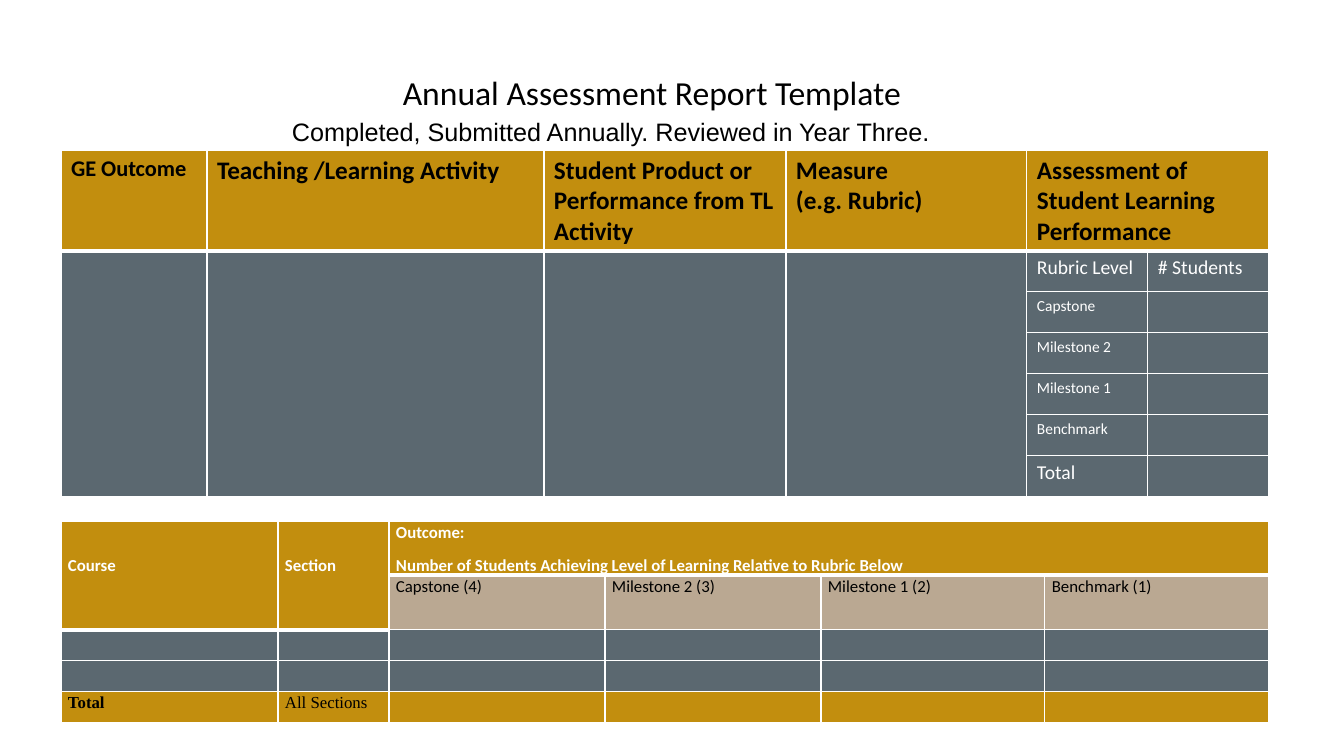
from pptx import Presentation
from pptx.dml.color import RGBColor
from pptx.enum.text import PP_ALIGN as Align
from pptx.oxml import parse_xml
from pptx.oxml.ns import nsdecls
from pptx.util import Pt

PX = 914400 / 100.8
COLORS = {"gold": "C28E0E", "slate": "5B6870", "tan": "BAA892",
          "white": "FFFFFF", "black": "000000"}
LEVELS = ["Capstone", "Milestone 2", "Milestone 1", "Benchmark"]
THIN, THICK = 1, 3


def px(length):
    return round(length * PX)


def color(name):
    return RGBColor.from_string(COLORS[name])


def write(frame, text, size, ink="black", font="Calibri", bold=False,
          align=Align.LEFT):
    frame.text = text
    for paragraph in frame.paragraphs:
        paragraph.alignment = align
        paragraph.font.size = Pt(size)
        paragraph.font.name = font
        paragraph.font.bold = bold
        paragraph.font.color.rgb = color(ink)


def add_heading(slide, box, text, size, font, align):
    frame = slide.shapes.add_textbox(*map(px, box)).text_frame
    frame.word_wrap = True
    write(frame, text, size, font=font, align=align)


def add_grid(slide, left, top, widths, heights):
    """Add a table without style flags, sized by its columns and rows."""
    table = slide.shapes.add_table(
        len(heights), len(widths), px(left), px(top),
        px(sum(widths)), px(sum(heights))).table
    table.first_row = table.horz_banding = False
    for column, width in zip(table.columns, widths):
        column.width = px(width)
    for row, height in zip(table.rows, heights):
        row.height = px(height)
    return table


def paint(cell, fill, bottom=THIN):
    """Fill a cell and rule its left, right and bottom edges in white."""
    cell.fill.solid()
    cell.fill.fore_color.rgb = color(fill)
    properties = cell._tc.get_or_add_tcPr()
    edges = [("lnL", THIN), ("lnR", THIN), ("lnB", bottom)]
    for index, (edge, width) in enumerate(edges):
        properties.insert(index, parse_xml(
            f'<a:{edge} {nsdecls("a")} w="{Pt(width)}"><a:solidFill>'
            f'<a:srgbClr val="{COLORS["white"]}"/></a:solidFill></a:{edge}>'))


def add_outcome_table(slide, left, top):
    table = add_grid(slide, left, top, [146, 337, 242, 241, 121, 121],
                     [100] + [41] * 6)
    for r, row in enumerate(table.rows):
        for cell in row.cells:
            paint(cell, "slate" if r else "gold", THIN if r else THICK)

    table.cell(0, 4).merge(table.cell(0, 5))
    for c in range(4):
        table.cell(1, c).merge(table.cell(6, c))

    headers = ["GE Outcome", "Teaching /Learning Activity",
               "Student Product or Performance from TL Activity",
               "Measure\n(e.g. Rubric)",
               "Assessment of Student Learning Performance"]
    for c, header in enumerate(headers):
        write(table.cell(0, c).text_frame, header, 18 if c else 16, bold=True)

    for r, label in enumerate(["Rubric Level", *LEVELS, "Total"], start=1):
        size = 11 if label in LEVELS else 14
        write(table.cell(r, 4).text_frame, label, size, "white")
    write(table.cell(1, 5).text_frame, "# Students", 14, "white")


def add_section_table(slide, left, top):
    table = add_grid(slide, left, top, [217, 111, 216, 216, 224, 224],
                     [54, 54, 31, 31, 31])
    row_fills = ["gold", "tan", "slate", "slate", "gold"]
    for r, fill in enumerate(row_fills):
        for c, cell in enumerate(table.rows[r].cells):
            in_header = r == 0 or (r == 1 and c < 2)
            paint(cell, "gold" if in_header else fill,
                  THICK if in_header else THIN)
            cell.margin_left = cell.margin_right = px(7)
            cell.margin_top = cell.margin_bottom = 0
            write(cell.text_frame, "", 12)

    def label(r, c, text, **style):
        frame = table.cell(r, c).text_frame
        write(frame, text, 12, **style)
        for paragraph in frame.paragraphs:
            paragraph.line_spacing = 1.07
            paragraph.space_after = Pt(8)

    for c, header in enumerate(["Course", "Section"]):
        table.cell(0, c).merge(table.cell(1, c))
        table.cell(0, c).margin_top = px(33)
        label(0, c, header, ink="white", bold=True)
    table.cell(0, 2).merge(table.cell(0, 5))
    label(0, 2, "Outcome:\nNumber of Students Achieving Level of Learning "
          "Relative to Rubric Below", ink="white", bold=True)
    for i, level in enumerate(LEVELS):
        label(1, 2 + i, f"{level} ({4 - i})")
    label(4, 0, "Total", font="Times New Roman", bold=True)
    label(4, 1, "All Sections", font="Times New Roman")


def main():
    deck = Presentation()
    deck.slide_width, deck.slide_height = px(1344), px(756)
    slide = deck.slides.add_slide(deck.slide_layouts[6])
    add_heading(slide, (282, 111, 734, 35),
                "Completed, Submitted Annually. Reviewed in Year Three.",
                18, "Arial", Align.LEFT)
    add_outcome_table(slide, 61, 150)
    add_section_table(slide, 61, 521)
    add_heading(slide, (288, 67, 728, 50),
                "Annual Assessment Report Template",
                24, "Calibri", Align.CENTER)
    deck.save("out.pptx")


if __name__ == "__main__":
    main()
